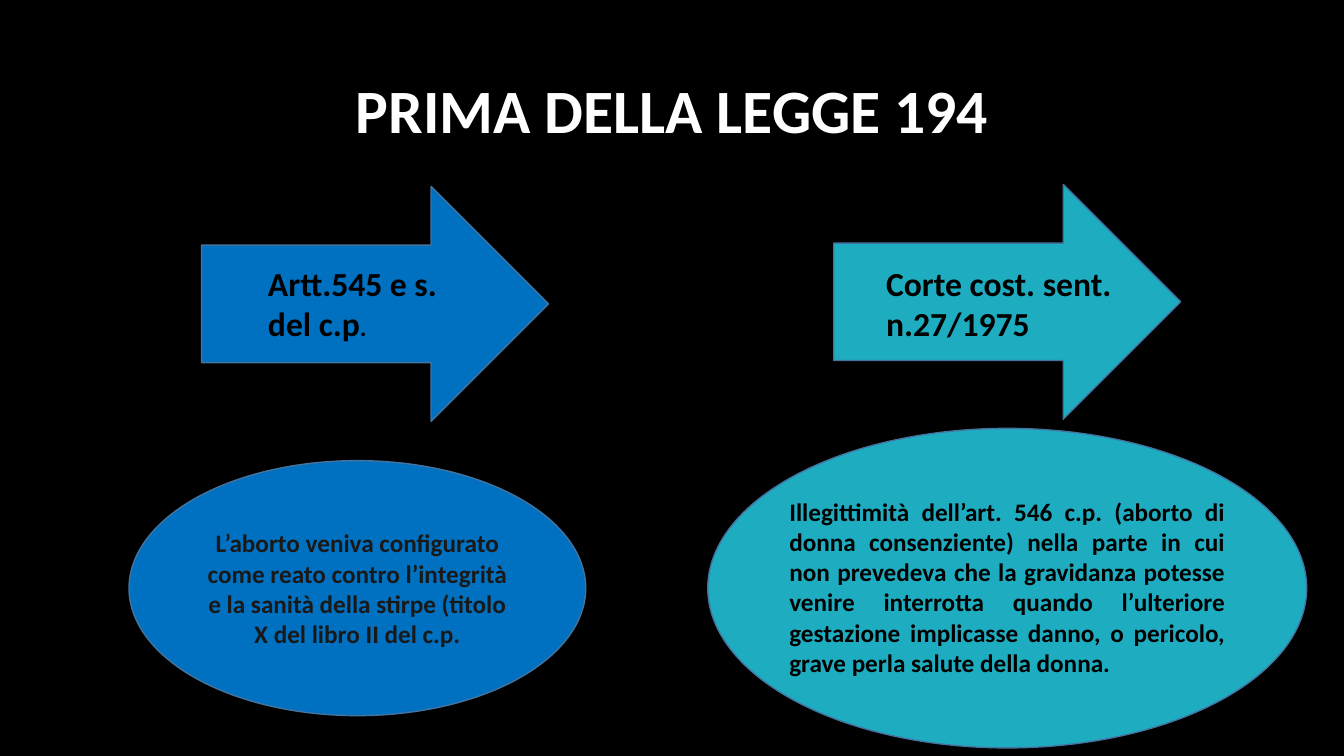
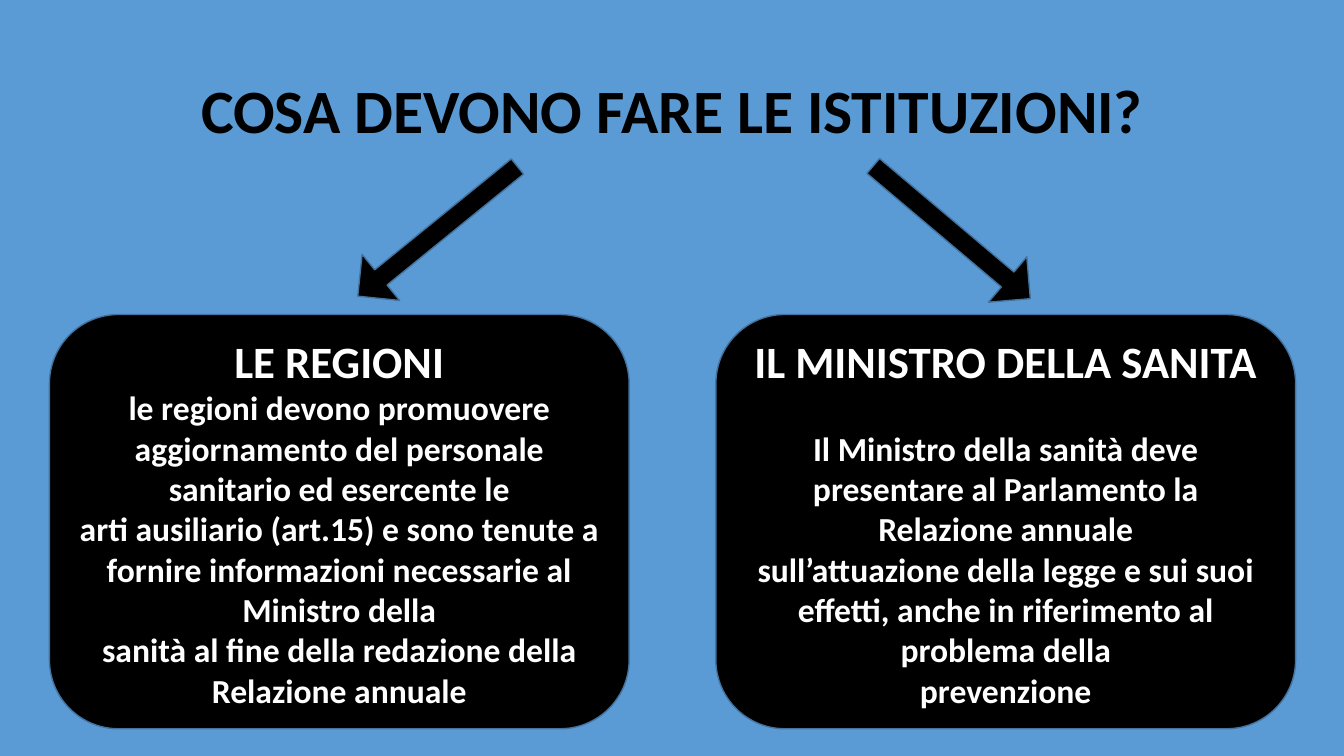
from pptx import Presentation
from pptx.dml.color import RGBColor
from pptx.enum.shapes import MSO_SHAPE
from pptx.enum.text import MSO_ANCHOR, MSO_AUTO_SIZE, PP_ALIGN
from pptx.util import Inches, Pt

# Shared look
FONT = "Calibri"
BLACK = RGBColor(0x00, 0x00, 0x00)
WHITE = RGBColor(0xFF, 0xFF, 0xFF)
INK = RGBColor(0x19, 0x19, 0x19)
BLUE = RGBColor(0x00, 0x70, 0xC0)
TEAL = RGBColor(0x1E, 0xAD, 0xC0)
SKY = RGBColor(0x5B, 0x9B, 0xD5)
EDGE = RGBColor(0x43, 0x73, 0x9E)


def write(frame, paras, color, align):
    """Fill a frame; each paragraph is a list of (text, size) runs."""
    frame.word_wrap = True
    for i, runs in enumerate(paras):
        para = frame.add_paragraph() if i else frame.paragraphs[0]
        para.alignment = align
        for text, size in runs:
            run = para.add_run()
            run.text = text
            font = run.font
            font.name, font.size, font.bold = FONT, Pt(size), True
            font.color.rgb = color


def add_slide(deck, title, back, color):
    slide = deck.slides.add_slide(deck.slide_layouts[5])
    slide.background.fill.solid()
    slide.background.fill.fore_color.rgb = back
    head = slide.shapes.title
    head.left, head.top = Inches(0.92), Inches(0.4)
    head.width, head.height = Inches(11.5), Inches(1.45)
    frame = head.text_frame
    frame.auto_size = MSO_AUTO_SIZE.NONE
    frame.vertical_anchor = MSO_ANCHOR.MIDDLE
    write(frame, [[(title, 44)]], color, PP_ALIGN.CENTER)
    frame.paragraphs[0].line_spacing = 0.9
    return slide


def add_form(slide, kind, box, fill):
    form = slide.shapes.add_shape(kind, *map(Inches, box))
    form.shadow.inherit = False
    form.fill.solid()
    form.fill.fore_color.rgb = fill
    form.line.color.rgb = EDGE
    form.line.width = Pt(1)
    form.text_frame.vertical_anchor = MSO_ANCHOR.MIDDLE
    return form


def add_text(slide, box, paras, align=PP_ALIGN.LEFT):
    frame = slide.shapes.add_textbox(*map(Inches, box)).text_frame
    write(frame, paras, BLACK, align)
    frame.auto_size = MSO_AUTO_SIZE.SHAPE_TO_FIT_TEXT


def add_arrow(slide, left, top, angle):
    arrow = add_form(slide, MSO_SHAPE.RIGHT_ARROW, (left, top, 2.04, 0.59), BLACK)
    arrow.adjustments[0] = 0.33
    arrow.rotation = angle


def add_card(slide, left, head, lines, gap=0):
    card = add_form(slide, MSO_SHAPE.ROUNDED_RECTANGLE, (left, 3.12, 5.75, 4.11), BLACK)
    paras = [[(head, 32)]] + [[(line, 24)] for line in lines]
    write(card.text_frame, paras, WHITE, PP_ALIGN.CENTER)
    card.text_frame.paragraphs[1].space_before = Pt(gap)


def law_slide(deck):
    slide = add_slide(deck, "PRIMA DELLA LEGGE 194", BLACK, WHITE)
    # Arrows with their labels
    for left, top, fill in ((2, 1.85, BLUE), (8.27, 1.83, TEAL)):
        add_form(slide, MSO_SHAPE.RIGHT_ARROW, (left, top, 3.44, 2.33), fill)
    add_text(slide, (2.56, 2.56, 1.96, 0.91),
             [[("Artt.545 e s.", 24)], [("del c.p", 24), (".", 18)]])
    add_text(slide, (8.69, 2.56, 2.59, 0.91),
             [[("Corte cost. sent. n.27/1975", 24)]])
    # Ovals with the outcome
    crime = add_form(slide, MSO_SHAPE.OVAL, (1.28, 4.57, 4.53, 2.53), BLUE)
    write(crime.text_frame,
          [[("L’aborto veniva configurato come reato contro l’integrità e la "
             "sanità della stirpe (titolo X del libro II del c.p.", 18)]],
          INK, PP_ALIGN.CENTER)
    add_form(slide, MSO_SHAPE.OVAL, (7.02, 4.25, 5.94, 3.17), TEAL)
    add_text(slide, (7.73, 4.87, 4.52, 1.92),
             [[("Illegittimità dell’art. 546 c.p. (aborto di donna consenziente) "
                "nella parte in cui non prevedeva che la gravidanza potesse venire "
                "interrotta quando l’ulteriore gestazione implicasse danno, o "
                "pericolo, grave perla salute della donna.", 18)]],
             PP_ALIGN.JUSTIFY)


def duty_slide(deck):
    slide = add_slide(deck, "COSA DEVONO FARE LE ISTITUZIONI?", SKY, BLACK)
    # Arrows from the title to the cards
    add_arrow(slide, 3.32, 2, 140.9)
    add_arrow(slide, 8.42, 2.01, 40.2)
    # Cards
    add_card(slide, 0.49, "LE REGIONI", [
        "le regioni devono promuovere aggiornamento del personale sanitario "
        "ed esercente le",
        "arti ausiliario (art.15) e sono tenute a fornire informazioni "
        "necessarie al Ministro della",
        "sanità al fine della redazione della Relazione annuale"])
    add_card(slide, 7.1, "IL MINISTRO DELLA SANITA", [
        "Il Ministro della sanità deve presentare al Parlamento la "
        "Relazione annuale",
        "sull’attuazione della legge e sui suoi effetti, anche in riferimento "
        "al problema della",
        "prevenzione"], gap=29)


def main():
    deck = Presentation()
    deck.slide_width, deck.slide_height = Inches(13.33), Inches(7.5)
    law_slide(deck)
    duty_slide(deck)
    deck.save("out.pptx")


if __name__ == "__main__":
    main()
